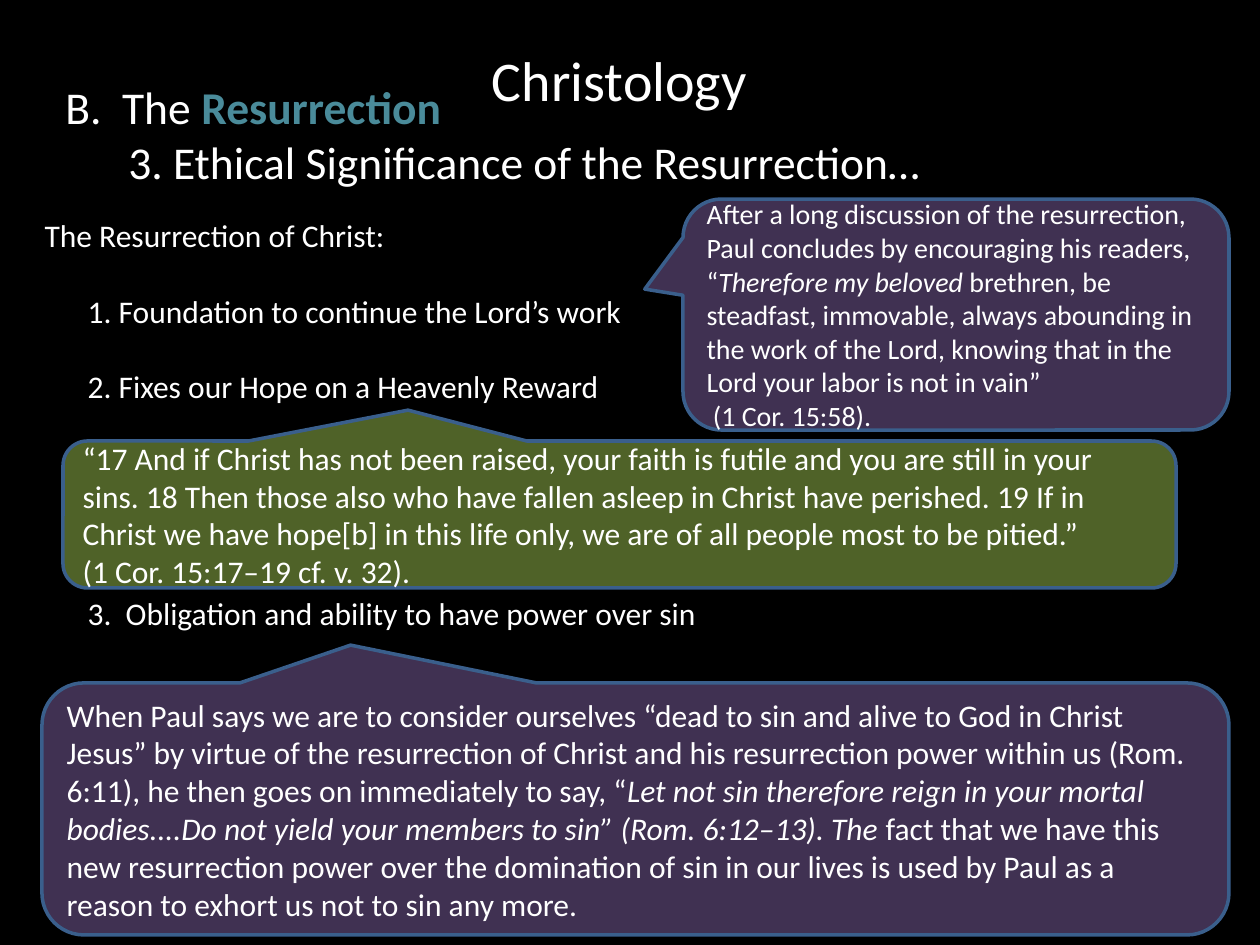
"""Build the Christology slide on the ethical significance of the Resurrection."""
from lxml import etree
from pptx import Presentation
from pptx.dml.color import RGBColor
from pptx.enum.shapes import MSO_SHAPE
from pptx.enum.text import MSO_ANCHOR, MSO_AUTO_SIZE, PP_ALIGN
from pptx.oxml.ns import qn
from pptx.util import Emu, Pt

BUBBLE = MSO_SHAPE.ROUNDED_RECTANGULAR_CALLOUT
MIDDLE, TOP = MSO_ANCHOR.MIDDLE, MSO_ANCHOR.TOP
LEFT, CENTER = PP_ALIGN.LEFT, PP_ALIGN.CENTER
FIXED = MSO_AUTO_SIZE.NONE
SCALE = 914400 / 126
COLORS = {
    "back": "000000", "text": "FFFFFF", "accent": "4A8B9A",
    "purple": "403152", "green": "4F6228", "edge": "3A5F8C",
}


def px(count):
    return Emu(round(count * SCALE))


def tint(name):
    return RGBColor.from_string(COLORS[name])


class Deck:
    """Holds the text style and the current slide."""

    def __init__(self, font):
        self.font = font
        self.file = Presentation()
        self.file.slide_width, self.file.slide_height = px(1260), px(945)
        self.slide = self.file.slides.add_slide(self.file.slide_layouts[1])
        fill = self.slide.background.fill
        fill.solid()
        fill.fore_color.rgb = tint("back")

    def place(self, shape, box):
        for name, size in zip(("left", "top", "width", "height"), box):
            setattr(shape, name, px(size))

    def letter(self, shape, paras, size, anchor=TOP, align=LEFT):
        frame = shape.text_frame
        look = {"word_wrap": True, "auto_size": FIXED, "vertical_anchor": anchor}
        for name, value in look.items():
            setattr(frame, name, value)
        for index, runs in enumerate(paras):
            para = frame.paragraphs[0] if index == 0 else frame.add_paragraph()
            para.alignment = align
            for text, *style in runs:
                if text == "\n":
                    para.add_line_break()
                    continue
                run = para.add_run()
                run.text = text
                form = {"name": self.font, "size": Pt(size)}
                form.update({name: True for name in style})
                for name, value in form.items():
                    setattr(run.font, name, value)
                run.font.color.rgb = tint("accent" if "bold" in style else "text")
        return frame

    def title(self, box, text):
        shape = self.slide.shapes.title
        self.place(shape, box)
        self.letter(shape, [[(text,)]], 32, MIDDLE, CENTER)

    def list(self, box, items, size):
        shape = self.slide.placeholders[1]
        self.place(shape, box)
        frame = self.letter(shape, [[(text,)] for text, _, _ in items], size)
        for para, (_, indent, gap) in zip(frame.paragraphs, items):
            para.space_before = Pt(gap)
            props = para._p.get_or_add_pPr()
            props.set("marL", str(px(indent)))
            props.set("indent", "0")
            etree.SubElement(props, qn("a:buNone"))

    def label(self, box, runs, size):
        shape = self.slide.shapes.add_textbox(*map(px, box))
        self.letter(shape, [runs], size)

    def bubble(self, box, tip, color, paras, size):
        shape = self.slide.shapes.add_shape(BUBBLE, *map(px, box))
        shape.shadow.inherit = False
        for index, value in enumerate(tip):
            shape.adjustments[index] = value
        shape.fill.solid()
        shape.fill.fore_color.rgb = tint(color)
        shape.line.color.rgb = tint("edge")
        shape.line.width = Pt(2)
        self.letter(shape, paras, size, MIDDLE)


def main():
    deck = Deck("Calibri")
    deck.title((84, 0, 1071, 158), "Christology")
    deck.list((32, 210, 998, 471), [
        ("The Resurrection of Christ:", 0, 0),
        ("1. Foundation to continue the Lord’s work", 43, 21.6),
        ("2. Fixes our Hope on a Heavenly Reward", 43, 21.6),
        ("3.  Obligation and ability to have power over sin", 43, 108),
    ], 18)
    deck.label((53, 73, 1144, 123), [
        ("B.  The ",), ("Resurrection", "bold"), ("\n",),
        ("\t3. Ethical Significance of the Resurrection…",),
    ], 26)
    deck.bubble((683, 199, 546, 231), (-0.57, -0.11), "purple", [
        [("After a long discussion of the resurrection, Paul concludes by "
          "encouraging his readers, “",),
         ("Therefore my beloved ", "italic"),
         ("brethren, be steadfast, immovable, always abounding in the work of "
          "the Lord, knowing that in the Lord your labor is not in vain”",)],
        [(" (1 Cor. 15:58).",)],
    ], 16)
    deck.bubble((63, 441, 1113, 147), (-0.19, -0.71), "green", [
        [("“17 And if Christ has not been raised, your faith is futile and you "
          "are still in your sins. 18 Then those also who have fallen asleep in "
          "Christ have perished. 19 If in Christ we have hope[b] in this life "
          "only, we are of all people most to be pitied.”",)],
        [("(1 Cor. 15:17–19 cf. v. 32).",)],
    ], 18)
    deck.bubble((42, 683, 1187, 252), (-0.24, -0.65), "purple", [
        [("When Paul says we are to consider ourselves “dead to sin and alive to "
          "God in Christ Jesus” by virtue of the resurrection of Christ and his "
          "resurrection power within us (Rom. 6:11), he then goes on immediately "
          "to say, “",),
         ("Let not sin therefore reign in your mortal bodies....Do not yield "
          "your members to sin” (Rom. 6:12–13). The ", "italic"),
         ("fact that we have this new resurrection power over the domination of "
          "sin in our lives is used by Paul as a reason to exhort us not to sin "
          "any more.",)],
    ], 18)
    deck.file.save("out.pptx")


if __name__ == "__main__":
    main()
